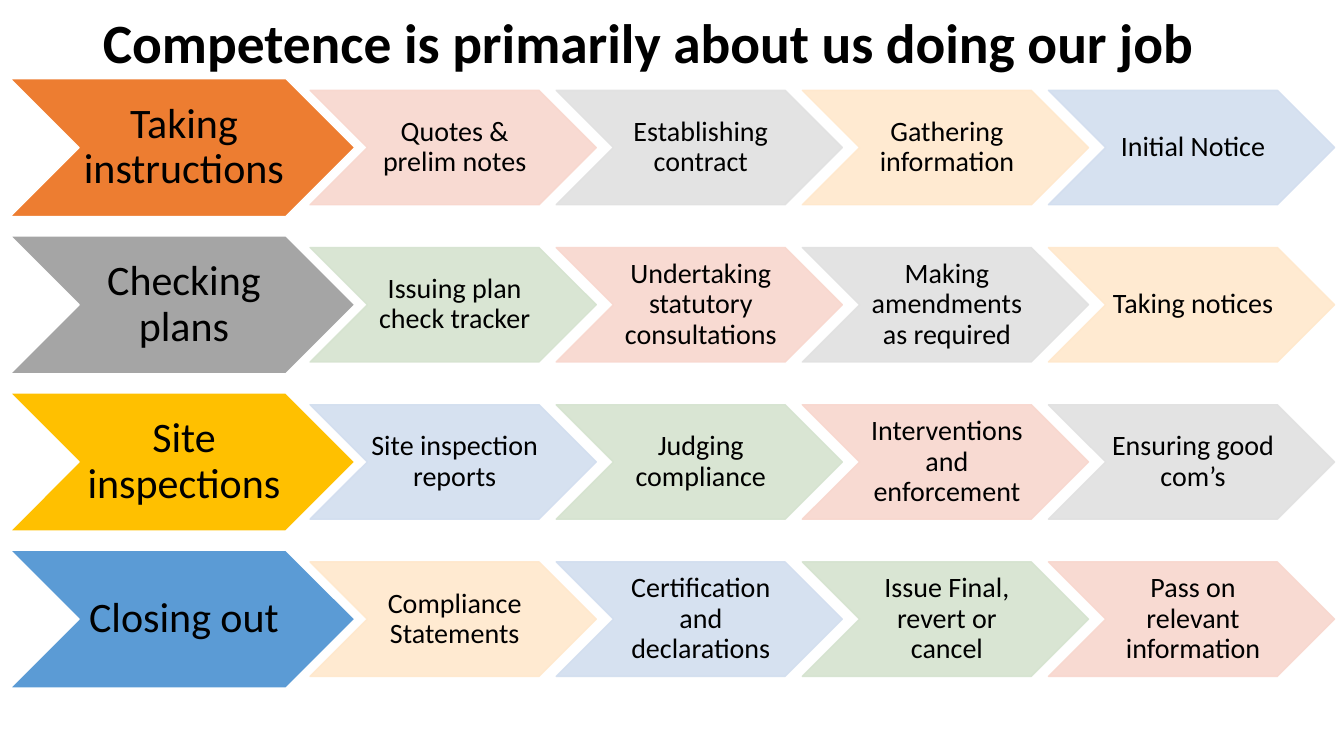
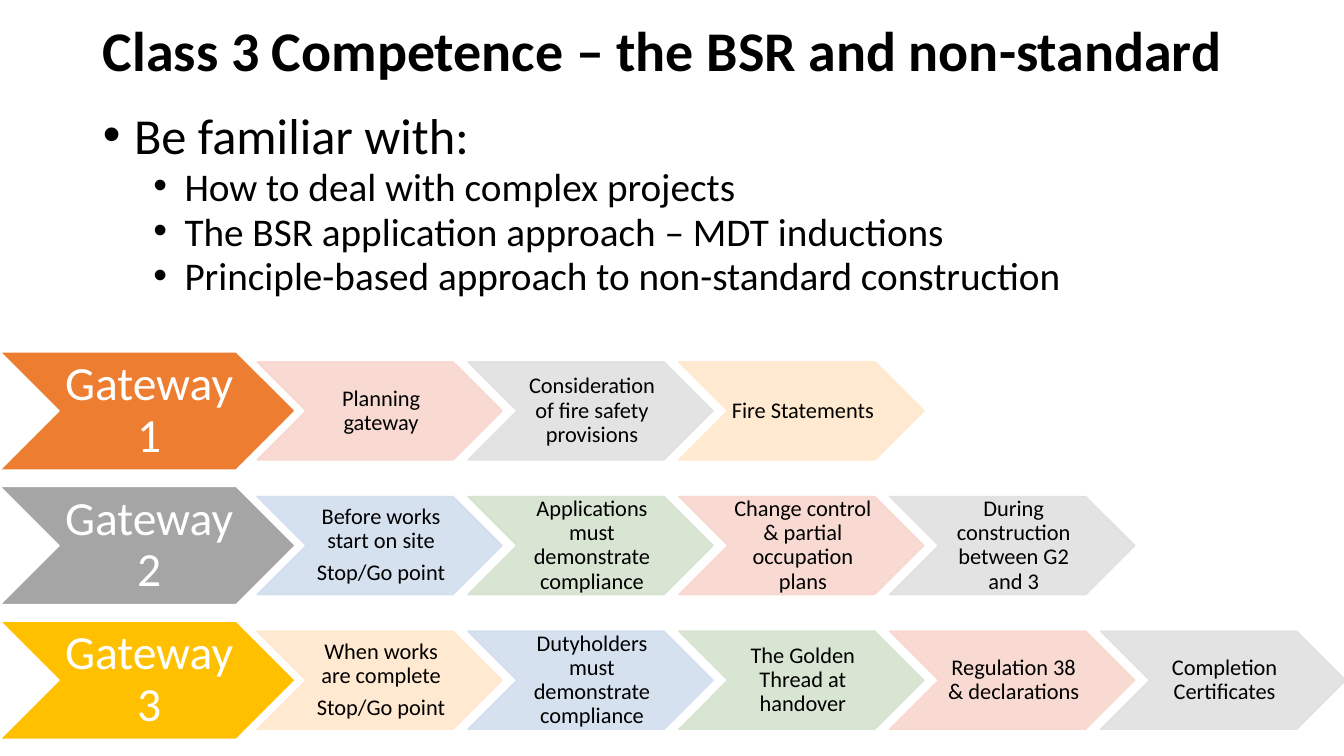
from itertools import cycle

from lxml import etree
from pptx import Presentation
from pptx.dml.color import RGBColor
from pptx.enum.shapes import MSO_SHAPE
from pptx.enum.text import MSO_ANCHOR, MSO_AUTO_SIZE, PP_ALIGN
from pptx.oxml.ns import qn
from pptx.util import Inches, Pt

CHEVRON = MSO_SHAPE.CHEVRON
LEFT, CENTER = PP_ALIGN.LEFT, PP_ALIGN.CENTER
TOP, MIDDLE = MSO_ANCHOR.TOP, MSO_ANCHOR.MIDDLE
NO_AUTOFIT = MSO_AUTO_SIZE.NONE

FONT = "Calibri"
BLACK = RGBColor(0x00, 0x00, 0x00)
WHITE = RGBColor(0xFF, 0xFF, 0xFF)
ORANGE = RGBColor(0xED, 0x7D, 0x31)
GREY = RGBColor(0xA5, 0xA5, 0xA5)
GOLD = RGBColor(0xFF, 0xC0, 0x00)
BLUE = RGBColor(0x5B, 0x9B, 0xD5)
PALE_PINK = RGBColor(0xF8, 0xD7, 0xCE)
PALE_GREY = RGBColor(0xE1, 0xE1, 0xE1)
PALE_CREAM = RGBColor(0xFF, 0xE8, 0xCC)
PALE_BLUE = RGBColor(0xD2, 0xDE, 0xEF)
PALE_GREEN = RGBColor(0xD5, 0xE3, 0xCF)
HEAD_COLORS = (ORANGE, GREY, GOLD, BLUE)
STEP_COLORS = (PALE_PINK, PALE_GREY, PALE_CREAM, PALE_BLUE, PALE_GREEN)

SLIDE_W, SLIDE_H = Inches(13.33), Inches(7.5)
MARGIN = Inches(0.92)
CONTENT_W = Inches(11.5)
TITLE_BOTTOM = Inches(0.91)

# Chevron proportions
HEIGHT = 0.4        # of a chevron's width
STEP_SCALE = 0.83   # step size against its row's head
FIRST_STEP = 0.87   # of the head's width
STEP_PITCH = 0.86   # of the step's width
ROW_PITCH = 1.14    # of the head's height
STEP_OPACITY = 90

JOB_ROWS = (
    ("Taking instructions", "Quotes & prelim notes", "Establishing contract",
     "Gathering information", "Initial Notice"),
    ("Checking plans", "Issuing plan check tracker",
     "Undertaking statutory consultations", "Making amendments as required",
     "Taking notices"),
    ("Site inspections", "Site inspection reports", "Judging compliance",
     "Interventions and enforcement", "Ensuring good com’s"),
    ("Closing out", "Compliance Statements", "Certification and declarations",
     "Issue Final, revert or cancel", "Pass on relevant information"),
)
GATEWAY_ROWS = (
    ("Gateway 1", "Planning gateway",
     "Consideration of fire safety provisions", "Fire Statements"),
    ("Gateway 2", "Before works start on site\nStop/Go point",
     "Applications must demonstrate compliance",
     "Change control & partial occupation plans",
     "During construction between G2 and 3"),
    ("Gateway 3", "When works are complete\nStop/Go point",
     "Dutyholders must demonstrate compliance",
     "The Golden Thread at handover", "Regulation 38 & declarations",
     "Completion Certificates"),
)
FAMILIAR_WITH = (
    "How to deal with complex projects",
    "The BSR application approach – MDT inductions",
    "Principle-based approach to non-standard construction",
)


def add_text(p, text, *, size, color=BLACK, bold=False, align=LEFT,
             spacing=0.9, before=0, after=0):
    p.alignment = align
    p.line_spacing = spacing
    p.space_before, p.space_after = Pt(before), Pt(after)
    r = p.add_run()
    r.text = text
    r.font.name, r.font.size = FONT, Pt(size)
    r.font.bold, r.font.color.rgb = bold, color


def next_paragraph(tf, index):
    return tf.add_paragraph() if index else tf.paragraphs[0]


def set_bullet(p, level, indent):
    p.level = level
    pPr = p._p.get_or_add_pPr()
    pPr.set("marL", str(indent))
    pPr.set("indent", str(-Inches(0.31)))
    etree.SubElement(pPr, qn("a:buFont")).set("typeface", "Arial")
    etree.SubElement(pPr, qn("a:buChar")).set("char", "•")


def set_opacity(shape, percent):
    """Apply one opacity to the solid fill and the line."""
    for color in shape._element.spPr.iter(qn("a:srgbClr")):
        etree.SubElement(color, qn("a:alpha")).set("val", str(percent * 1000))


def place(sp, left, top, width, height, anchor):
    sp.left, sp.top, sp.width, sp.height = left, top, width, height
    tf = sp.text_frame
    tf.auto_size, tf.word_wrap, tf.vertical_anchor = NO_AUTOFIT, True, anchor
    return tf


def add_slide(prs, layout, title, top=0, size=40):
    s = prs.slides.add_slide(prs.slide_layouts.get_by_name(layout))
    tf = place(s.shapes.title, MARGIN, top, CONTENT_W, TITLE_BOTTOM - top, MIDDLE)
    add_text(tf.paragraphs[0], title, size=size, bold=True)
    return s


def add_bullets(s, heading, items):
    tf = place(s.placeholders[1], MARGIN, Inches(1.1), CONTENT_W, Inches(2.1), TOP)
    for i, text in enumerate((heading, *items)):
        p = next_paragraph(tf, i)
        level = 1 if i else 0
        set_bullet(p, level, Inches(0.31 + 0.5 * level))
        add_text(p, text, size=28 if level else 36, spacing=0.8,
                 before=5 if level else 0)


def add_chevron(s, left, top, width, text, fill, line, size, color=BLACK):
    sp = s.shapes.add_shape(CHEVRON, int(left), int(top), int(width),
                            int(width * HEIGHT))
    sp.shadow.inherit = False
    sp.fill.solid()
    sp.fill.fore_color.rgb = fill
    sp.line.color.rgb = line
    sp.line.width = Pt(1)
    tf = sp.text_frame
    tf.word_wrap, tf.vertical_anchor = True, MIDDLE
    tf.margin_left, tf.margin_right = Inches(0.03), 0
    tf.margin_top = tf.margin_bottom = Inches(0.01)
    for i, part in enumerate(text.split("\n")):
        add_text(next_paragraph(tf, i), part, size=size, color=color,
                 align=CENTER, after=0.35 * size)
    return sp


def add_process(s, rows, left, top, head_w, head_size, step_size,
                head_color=BLACK):
    """Draw rows of a head and its steps; step colours run on across rows."""
    step_w = head_w * STEP_SCALE
    head_h = head_w * HEIGHT
    step_drop = head_h * (1 - STEP_SCALE) / 2
    colors = cycle(STEP_COLORS)
    for row, ((head, *steps), fill) in enumerate(zip(rows, HEAD_COLORS)):
        y = top + row * head_h * ROW_PITCH
        add_chevron(s, left, y, head_w, head, fill, WHITE, head_size, head_color)
        for col, step in enumerate(steps):
            x = left + head_w * FIRST_STEP + col * step_w * STEP_PITCH
            tint = next(colors)
            sp = add_chevron(s, x, y + step_drop, step_w, step, tint, tint,
                             step_size)
            set_opacity(sp, STEP_OPACITY)


def main():
    prs = Presentation()
    prs.slide_width, prs.slide_height = SLIDE_W, SLIDE_H

    s = add_slide(prs, "Title Only",
                  "Competence is primarily about us doing our job", size=39.6)
    add_process(s, JOB_ROWS, Inches(0.1), Inches(0.78), Inches(3.42), 30, 20)

    s = add_slide(prs, "Title and Content",
                  "Class 3 Competence – the BSR and non-standard",
                  top=Inches(0.15))
    add_bullets(s, "Be familiar with:", FAMILIAR_WITH)
    add_process(s, GATEWAY_ROWS, 0, Inches(3.49), Inches(2.93), 34, 16, WHITE)

    prs.save("out.pptx")


if __name__ == "__main__":
    main()
